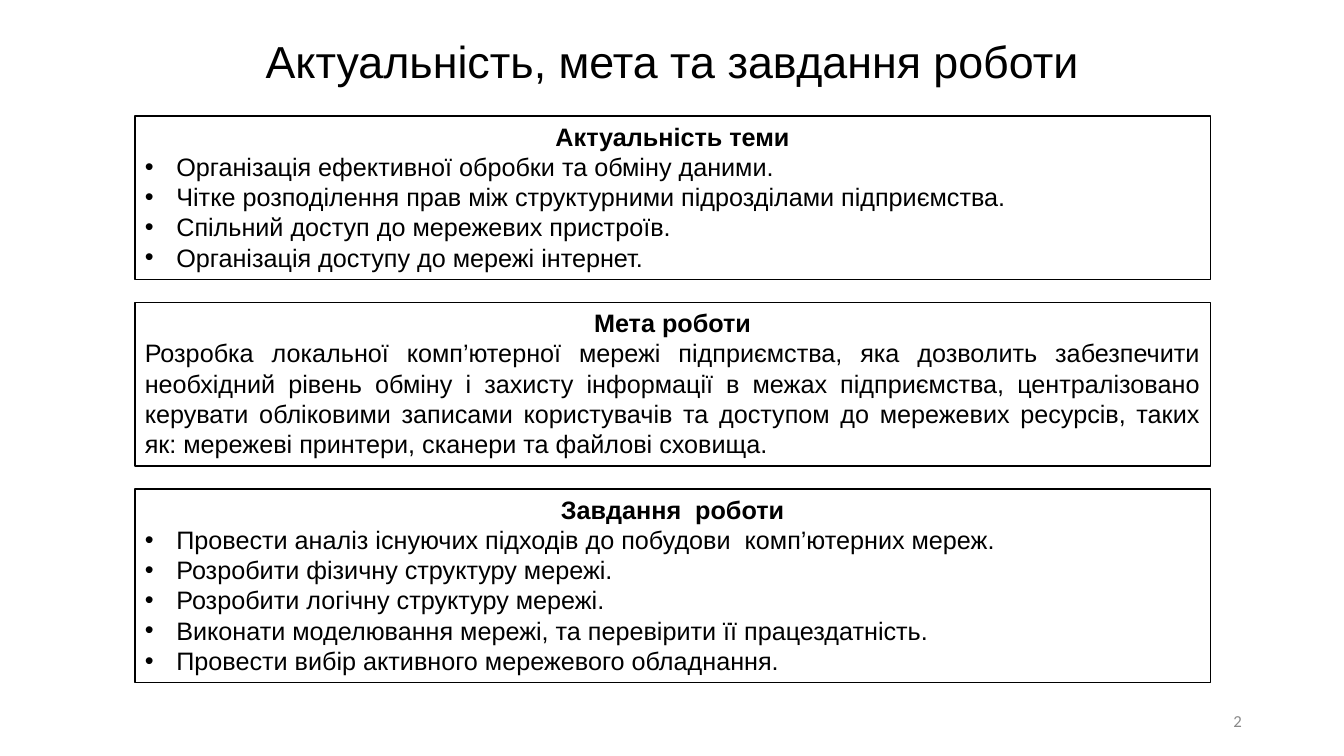
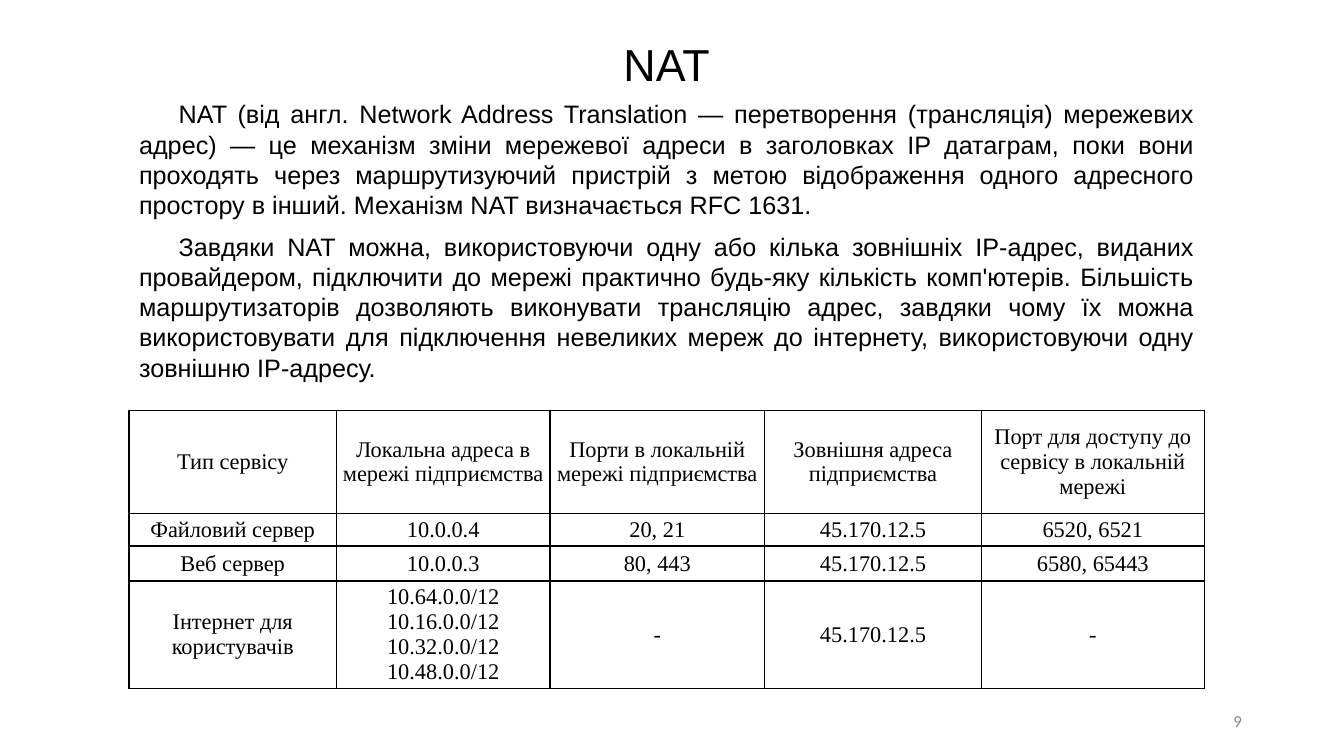
"""Build two slides on a company network: aims of the work, and NAT."""
from dataclasses import dataclass
from typing import NamedTuple

from lxml import etree
from pptx import Presentation, dml, table, util as u
from pptx.dml import color
from pptx.enum import shapes, text
from pptx.oxml import ns


@dataclass(frozen=True)
class Theme:
    """Colours, fonts and type sizes shared by the slides."""
    ink: str = "000000"
    paper: str = "FFFFFF"
    grey: str = "898989"
    sans: str = "Arial"
    serif: str = "Times New Roman"
    foot: str = "Calibri"
    title: int = 32
    body: int = 18
    cell: int = 16
    page: int = 12
    rule: int = 1


class Box(NamedTuple):
    """Place of a shape in centimetres."""
    left: float
    top: float
    width: float
    height: float


class Card(NamedTuple):
    """A framed block with a bold heading."""
    top: float
    height: float
    head: str
    lines: tuple[str, ...]
    dots: bool = True


THEME = Theme()
WIDE = 27.1
LEFT = 3.4
NAT_LEFT = 3.25
PAGE = Box(23.93, 17.65, 7.62, 1.02)
ALIGN = text.PP_ALIGN
TOP = text.MSO_ANCHOR.TOP
MIDDLE = text.MSO_ANCHOR.MIDDLE

CARDS = (
    Card(2.92, 4.12, "Актуальність теми", (
        "Організація ефективної обробки та обміну даними.",
        "Чітке розподілення прав між структурними підрозділами підприємства.",
        "Спільний доступ до мережевих пристроїв.",
        "Організація доступу до мережі інтернет.")),
    Card(7.62, 4.12, "Мета роботи", (
        "Розробка локальної комп’ютерної мережі підприємства, яка дозволить забезпечити "
        "необхідний рівень обміну і захисту інформації в межах підприємства, централізовано "
        "керувати обліковими записами користувачів та доступом до мережевих ресурсів, таких "
        "як: мережеві принтери, сканери та файлові сховища.",), False),
    Card(12.32, 4.88, "Завдання  роботи", (
        "Провести аналіз існуючих підходів до побудови  комп’ютерних мереж.",
        "Розробити фізичну структуру мережі.",
        "Розробити логічну структуру мережі.",
        "Виконати моделювання мережі, та перевірити її працездатність.",
        "Провести вибір активного мережевого обладнання.")),
)

NAT = (
    "NAT (від англ. Network Address Translation — перетворення (трансляція) мережевих "
    "адрес) — це механізм зміни мережевої адреси в заголовках IP датаграм, поки вони "
    "проходять через маршрутизуючий пристрій з метою відображення одного адресного "
    "простору в інший. Механізм NAT визначається RFC 1631.",
    "Завдяки NAT можна, використовуючи одну або кілька зовнішніх IP-адрес, виданих "
    "провайдером, підключити до мережі практично будь-яку кількість комп'ютерів. Більшість "
    "маршрутизаторів дозволяють виконувати трансляцію адрес, завдяки чому їх можна "
    "використовувати для підключення невеликих мереж до інтернету, використовуючи одну "
    "зовнішню IP-адресу.",
)

COLS = (5.23, 5.38, 5.41, 5.46, 5.62)
ROWS = (2.6, 0.82, 0.88, 2.7)
CELLS = (
    ("Тип сервісу", "Локальна адреса в мережі підприємства",
     "Порти в локальній мережі підприємства", "Зовнішня адреса підприємства",
     "Порт для доступу до сервісу в локальній мережі"),
    ("Файловий сервер", "10.0.0.4", "20, 21", "45.170.12.5", "6520, 6521"),
    ("Веб сервер", "10.0.0.3", "80, 443", "45.170.12.5", "6580, 65443"),
    ("Інтернет для користувачів",
     "10.64.0.0/12\n10.16.0.0/12\n10.32.0.0/12\n10.48.0.0/12", "-", "45.170.12.5", "-"),
)


def rgb(code: str) -> color.RGBColor:
    """Turn a hex code into a colour."""
    return color.RGBColor.from_string(code)


def place(shape, box: Box) -> None:
    """Move and size a shape."""
    shape.left, shape.top, shape.width, shape.height = map(u.Cm, box)


def setup(frame, anchor=TOP) -> None:
    """Wrap the text of a frame and fix its size."""
    frame.word_wrap = True
    frame.auto_size = text.MSO_AUTO_SIZE.NONE
    frame.vertical_anchor = anchor


def write(frame, words: str, *, size: int = THEME.body, font: str = THEME.sans,
          ink: str = THEME.ink, bold: bool = False, align=ALIGN.LEFT, after: float = 0,
          margin: float = 0, indent: float = 0, dot: bool = False) -> None:
    """Add a formatted paragraph, filling the first one if it is empty."""
    first = frame.paragraphs[0]
    para = frame.add_paragraph() if first.runs else first
    para.alignment = align
    para.line_spacing = 1.0
    para.space_before, para.space_after = u.Pt(0), u.Pt(after)
    props = para._p.get_or_add_pPr()
    props.set("marL", str(u.Cm(margin)))
    props.set("indent", str(u.Cm(indent)))
    if dot:
        etree.SubElement(props, ns.qn("a:buFont"), typeface=THEME.sans)
        etree.SubElement(props, ns.qn("a:buChar"), char="•")
    else:
        etree.SubElement(props, ns.qn("a:buNone"))
    run = para.add_run()
    run.text = words
    run.font.size, run.font.name, run.font.bold = u.Pt(size), font, bold
    run.font.color.rgb = rgb(ink)


def start(deck, layout: int, title: str, box: Box, page: str):
    """Add a slide with its title and page number."""
    slide = deck.slides.add_slide(deck.slide_layouts[layout])
    place(slide.shapes.title, box)
    setup(slide.shapes.title.text_frame)
    write(slide.shapes.title.text_frame, title, size=THEME.title, align=ALIGN.CENTER)
    foot = slide.shapes.add_textbox(*map(u.Cm, PAGE)).text_frame
    setup(foot, MIDDLE)
    write(foot, page, size=THEME.page, font=THEME.foot, ink=THEME.grey, align=ALIGN.RIGHT)
    return slide


def draw_card(shape, card: Card) -> None:
    """Frame a shape and fill it with a heading and lines."""
    place(shape, Box(LEFT, card.top, WIDE, card.height))
    shape.fill.solid()
    shape.fill.fore_color.rgb = rgb(THEME.paper)
    shape.line.color.rgb = rgb(THEME.ink)
    shape.line.width = u.Pt(THEME.rule)
    frame = shape.text_frame
    setup(frame)
    write(frame, card.head, bold=True, align=ALIGN.CENTER)
    hang = 0.79 if card.dots else 0
    for line in card.lines:
        write(frame, line, align=ALIGN.JUSTIFY, margin=hang, indent=-hang, dot=card.dots)


def edge(cell) -> None:
    """Draw the four borders of a cell."""
    props = cell._tc.get_or_add_tcPr()
    for side in "LRTB":
        line = etree.SubElement(props, ns.qn(f"a:ln{side}"), w=str(u.Pt(THEME.rule)))
        fill = etree.SubElement(line, ns.qn("a:solidFill"))
        etree.SubElement(fill, ns.qn("a:srgbClr"), val=THEME.ink)


def draw_grid(slide, box: Box) -> None:
    """Draw the table of services."""
    grid = slide.shapes.add_table(len(ROWS), len(COLS), *map(u.Cm, box)).table
    grid.first_row = grid.horz_banding = False
    for col, width in zip(grid.columns, COLS):
        col.width = u.Cm(width)
    for row, height, words in zip(grid.rows, ROWS, CELLS):
        row.height = u.Cm(height)
        for cell, value in zip(row.cells, words):
            edge(cell)
            cell.fill.background()
            cell.vertical_anchor = MIDDLE
            cell.margin_left = cell.margin_right = u.Cm(0.13)
            cell.margin_top = cell.margin_bottom = 0
            for line in value.split("\n"):
                write(cell.text_frame, line, size=THEME.cell, font=THEME.serif,
                      align=ALIGN.CENTER)


def aims(deck) -> None:
    """Build the slide on relevance, goal and tasks."""
    slide = start(deck, 3, "Актуальність, мета та завдання роботи",
                  Box(LEFT, 0.71, WIDE, 1.63), "2")
    goal = slide.shapes.add_shape(shapes.MSO_SHAPE.RECTANGLE, 0, 0, 0, 0)
    goal.shadow.inherit = False
    for shape, card in zip((slide.placeholders[1], goal, slide.placeholders[2]), CARDS):
        draw_card(shape, card)


def nat(deck) -> None:
    """Build the slide on address translation."""
    slide = start(deck, 1, "NAT", Box(NAT_LEFT, 0.79, WIDE, 1.63), "9")
    body = slide.placeholders[1]
    place(body, Box(NAT_LEFT, 2.36, WIDE, 7.47))
    setup(body.text_frame)
    for part in NAT:
        write(body.text_frame, part, align=ALIGN.JUSTIFY, indent=1, after=8)
    draw_grid(slide, Box(NAT_LEFT, 10.34, WIDE, sum(ROWS)))


def main() -> None:
    """Build and save the deck."""
    deck = Presentation()
    deck.slide_width, deck.slide_height = u.Cm(33.87), u.Cm(19.05)
    aims(deck)
    nat(deck)
    deck.save("out.pptx")


if __name__ == "__main__":
    main()
